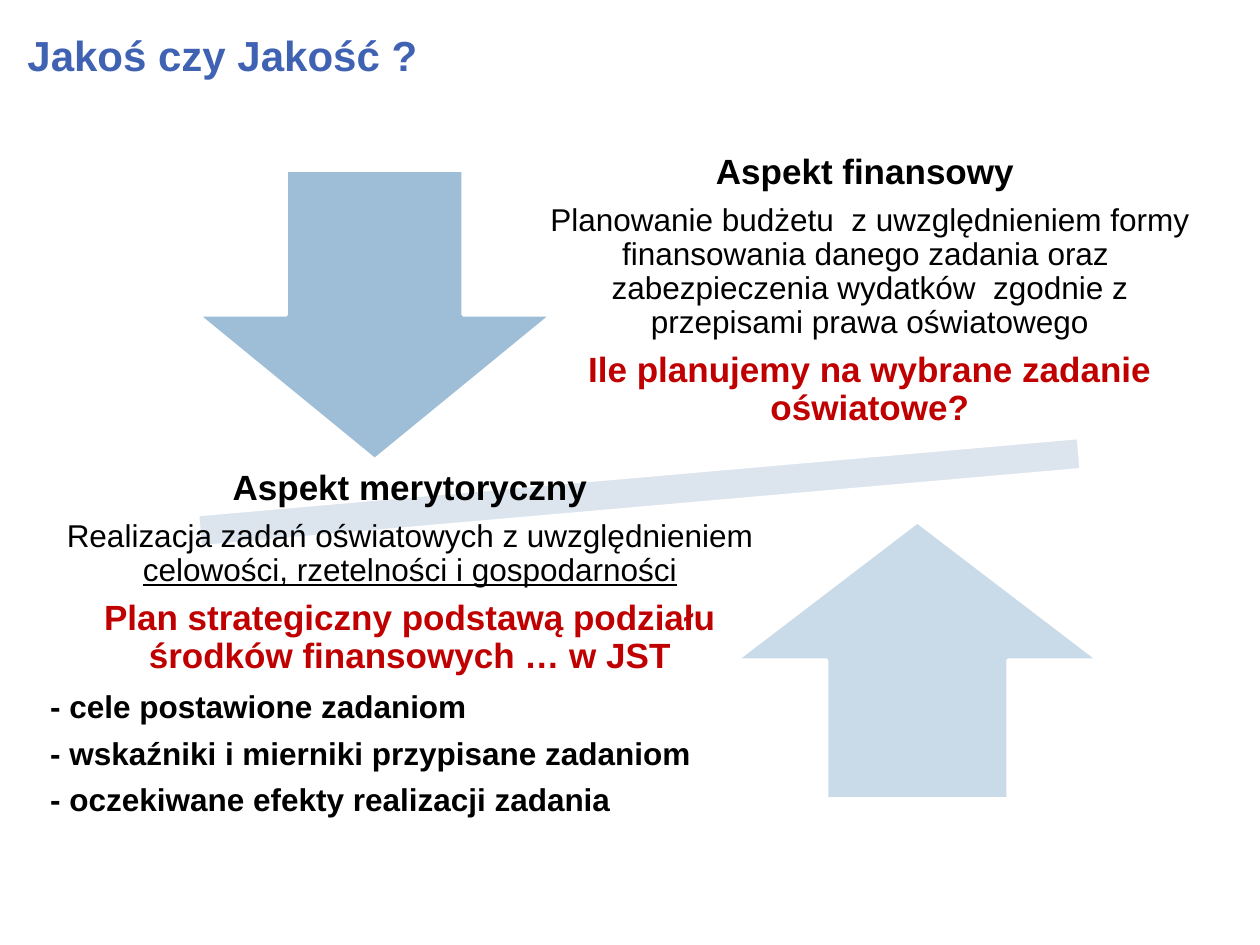
from dataclasses import dataclass

from lxml.etree import SubElement
from pptx import Presentation
from pptx.dml.color import RGBColor
from pptx.enum.shapes import MSO_SHAPE as Shape
from pptx.enum.text import MSO_ANCHOR as Anchor, PP_ALIGN as Align
from pptx.oxml.ns import qn
from pptx.slide import Slide
from pptx.util import Pt

BLUE = RGBColor(0x40, 0x62, 0xB3)
SKY = RGBColor(0x94, 0xB6, 0xD2)
PALE = RGBColor(0xDC, 0xE5, 0xEE)
RED = RGBColor(0xC0, 0x00, 0x00)
BLACK = RGBColor(0, 0, 0)
WHITE = RGBColor(0xFF, 0xFF, 0xFF)


@dataclass(frozen=True)
class Box:
    left: float
    top: float
    width: float
    height: float

    def lengths(self) -> tuple[Pt, Pt, Pt, Pt]:
        return Pt(self.left), Pt(self.top), Pt(self.width), Pt(self.height)


@dataclass(frozen=True)
class Figure:
    kind: Shape
    box: Box
    color: RGBColor
    opacity: int = 100
    rotation: float = 0


@dataclass(frozen=True)
class Line:
    text: str
    size: int = 18
    bold: bool = False
    color: RGBColor = BLACK
    align: Align = Align.CENTER
    underlined: str = ""
    before: float = 0


@dataclass(frozen=True)
class TextBlock:
    box: Box
    lines: list[Line]
    inset: float = 11.5
    anchor: Anchor = Anchor.TOP
    spacing: float = 0.9
    after: float = 7


def heading(text: str, color: RGBColor = BLACK) -> Line:
    return Line(text, 20, True, color)


def goal(text: str, before: float = 0) -> Line:
    return Line(f"- {text}", bold=True, align=Align.LEFT, before=before)


def draw_figure(s: Slide, figure: Figure) -> None:
    sp = s.shapes.add_shape(figure.kind, *figure.box.lengths())
    sp.rotation = figure.rotation
    sp.shadow.inherit = False
    sp.fill.solid()
    sp.fill.fore_color.rgb = figure.color
    if figure.opacity < 100:
        color = sp.fill._xPr.find(f".//{qn('a:srgbClr')}")
        SubElement(color, qn("a:alpha"), val=str(figure.opacity * 1000))
    sp.line.color.rgb = WHITE
    sp.line.width = Pt(2)


def draw_text(s: Slide, block: TextBlock) -> None:
    tf = s.shapes.add_textbox(*block.box.lengths()).text_frame
    tf.word_wrap = True
    tf.vertical_anchor = block.anchor
    tf.margin_left = tf.margin_right = Pt(block.inset)
    tf.margin_top = tf.margin_bottom = Pt(block.inset)
    for i, line in enumerate(block.lines):
        p = tf.add_paragraph() if i else tf.paragraphs[0]
        p.alignment = line.align
        p.line_spacing = block.spacing
        p.space_before = Pt(line.before)
        p.space_after = Pt(block.after)
        if line.align == Align.LEFT and i:
            p._p.get_or_add_pPr().set("marL", str(Pt(5)))
        p.font.name = "Arial"
        p.font.size = Pt(line.size)
        p.font.bold = line.bold
        p.font.color.rgb = line.color
        p.add_run().text = line.text
        if line.underlined:
            r = p.add_run()
            r.text = line.underlined
            r.font.underline = True


FIGURES = [
    Figure(Shape.MATH_MINUS, Box(21.6, 242, 687.6, 78.5), PALE, rotation=355),
    Figure(Shape.DOWN_ARROW, Box(113, 97.2, 202.3, 165.6), SKY, 90),
    Figure(Shape.UP_ARROW, Box(420.5, 298.1, 207.4, 158.4), SKY, 50),
]

TEXTS = [
    TextBlock(
        Box(8.6, 9.4, 442, 68.4),
        [Line("Jakoś czy Jakość ?", 24, True, BLUE, Align.LEFT)],
        inset=7.2, spacing=1, after=0,
    ),
    TextBlock(
        Box(293, 82.8, 408.2, 167),
        [
            heading("Aspekt finansowy "),
            Line("Planowanie budżetu  z uwzględnieniem formy finansowania danego "
                 "zadania oraz  zabezpieczenia wydatków  zgodnie z przepisami "
                 "prawa oświatowego"),
            heading("Ile planujemy na wybrane zadanie oświatowe?", RED),
        ],
        anchor=Anchor.MIDDLE,
    ),
    TextBlock(
        Box(12.2, 257, 444.2, 223),
        [
            heading("Aspekt merytoryczny"),
            Line("Realizacja zadań oświatowych z uwzględnieniem ",
                 underlined="celowości, rzetelności i gospodarności"),
            heading("Plan strategiczny podstawą podziału środków finansowych … w JST",
                    RED),
            goal("cele postawione zadaniom", before=2),
            goal("wskaźniki i mierniki przypisane zadaniom"),
            goal("oczekiwane efekty realizacji zadania"),
        ],
    ),
]


def main() -> None:
    prs = Presentation()
    prs.slide_width, prs.slide_height = Pt(720), Pt(540)
    s = prs.slides.add_slide(prs.slide_layouts[6])
    for figure in FIGURES:
        draw_figure(s, figure)
    for block in TEXTS:
        draw_text(s, block)
    prs.save("out.pptx")


if __name__ == "__main__":
    main()
